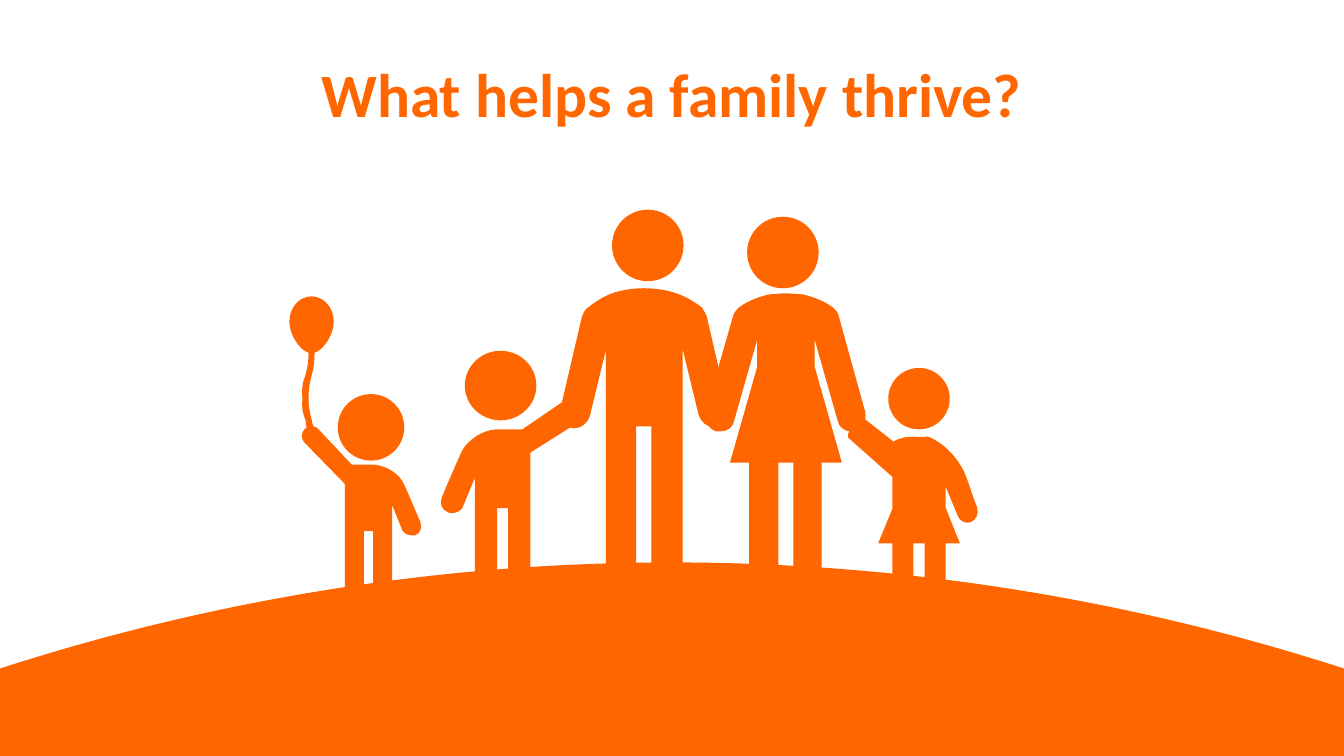
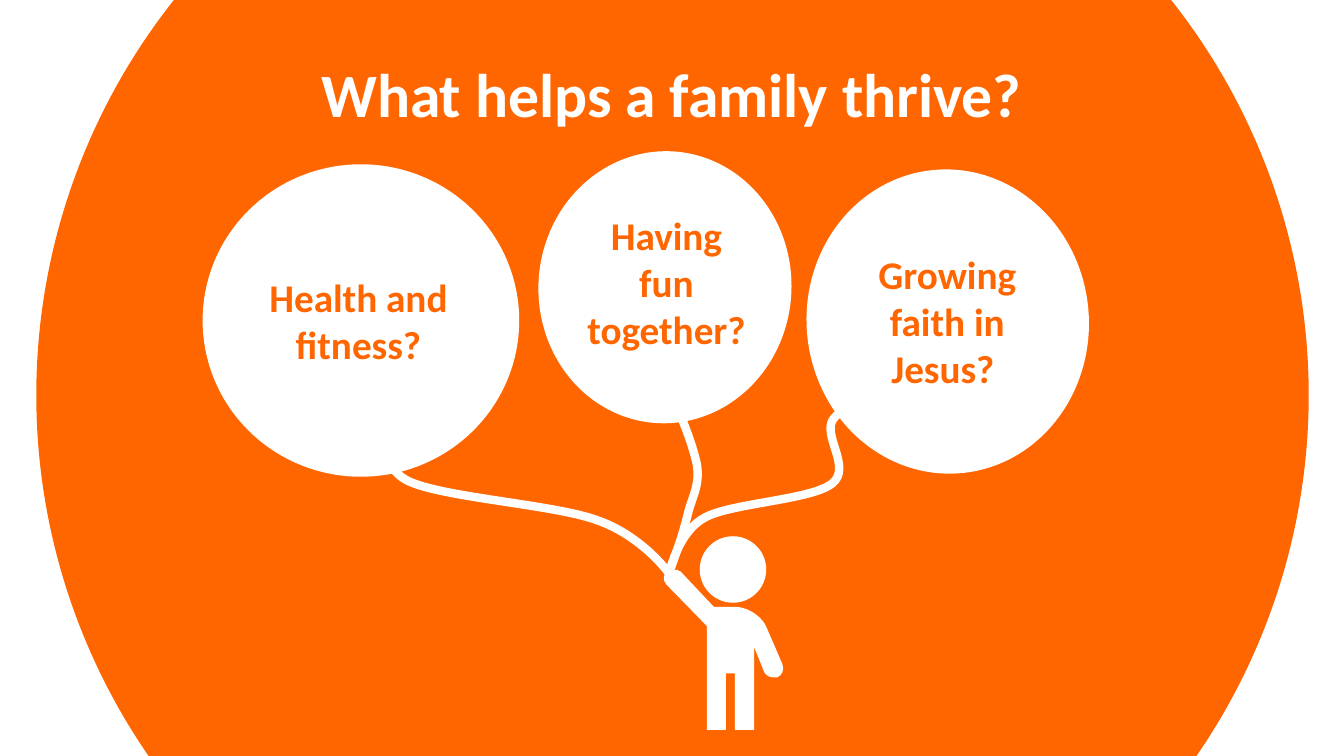
from dataclasses import dataclass

from lxml.etree import SubElement
from pptx import Presentation
from pptx.dml.color import RGBColor
from pptx.enum.shapes import MSO_SHAPE
from pptx.enum.text import MSO_ANCHOR, MSO_AUTO_SIZE, PP_ALIGN
from pptx.oxml.ns import qn
from pptx.util import Inches, Pt


@dataclass(frozen=True)
class Theme:
    """Colours, font and sizes shared by both slides."""

    orange: RGBColor = RGBColor(0xFF, 0x66, 0x00)
    white: RGBColor = RGBColor(0xFF, 0xFF, 0xFF)
    font: str = "Calibri"
    title_size: int = 44
    caption_size: int = 28
    string_width: int = 6


TITLE = "What helps a family thrive?"
CURVE_STEPS = 12
COMMANDS = {"M": "a:moveTo", "L": "a:lnTo", "C": "a:cubicBezTo"}
CHILD_HEAD = (3.35, 3.91, 0.66, 0.66)
CHILD_SHIFT = (3.59, 1.41)

CHILD_BODY = """
    L 3.49 4.61 L 3.71 4.61 C 3.86 4.62 3.98 4.73 4.01 4.81
    C 4.02 4.83 4.11 5.04 4.17 5.18 C 4.19 5.23 4.17 5.29 4.12 5.31
    C 4.11 5.31 4.09 5.31 4.08 5.31 C 4.04 5.31 4.01 5.29 3.99 5.26
    L 3.89 5.01 L 3.89 5.83 L 3.7 5.83 L 3.7 5.27 L 3.61 5.27 L 3.61 5.83
    L 3.42 5.83 L 3.42 4.8 L 3.02 4.39 C 2.98 4.35 2.99 4.29 3.02 4.26
    C 3.03 4.25 3.04 4.24 3.04 4.24
"""
CHILD = "M 3.04 4.24 C 3.06 4.24 3.09 4.23 3.1 4.24 C 3.12 4.24 3.14 4.25 3.16 4.26" + CHILD_BODY
BALLOON_CHILD = """
    M 2.87 3.19 C 2.87 3.05 2.97 2.94 3.09 2.94 C 3.21 2.94 3.31 3.05 3.31 3.19
    C 3.31 3.32 3.21 3.47 3.12 3.5 C 3.12 3.5 3.12 3.5 3.12 3.51
    C 3.12 3.58 3.11 3.66 3.09 3.73 C 3.07 3.8 3.06 3.87 3.06 3.95
    C 3.06 4.02 3.07 4.09 3.09 4.16 C 3.09 4.18 3.1 4.2 3.11 4.23
    C 3.13 4.23 3.14 4.24 3.16 4.26
""" + CHILD_BODY + """
    C 3.04 4.22 3.03 4.2 3.03 4.17 C 3 4.1 2.99 4.02 3 3.95
    C 2.99 3.87 3 3.79 3.03 3.72 C 3.05 3.65 3.06 3.58 3.06 3.51
    C 3.06 3.5 3.06 3.5 3.06 3.5 C 2.97 3.47 2.87 3.32 2.87 3.19
"""
SON = """
    M 5.72 4.2 C 5.78 4.11 5.69 3.97 5.59 3.98 L 5.18 4.26 L 4.92 4.26
    C 4.75 4.27 4.6 4.41 4.57 4.5 C 4.56 4.52 4.45 4.77 4.38 4.94
    C 4.36 4.99 4.38 5.06 4.44 5.08 C 4.45 5.09 4.47 5.09 4.48 5.09
    C 4.53 5.09 4.57 5.07 4.59 5.03 L 4.71 4.74 L 4.71 5.7 L 4.93 5.7
    L 4.93 5.04 L 5.04 5.04 L 5.04 5.7 L 5.26 5.7 L 5.26 4.49 L 5.72 4.2
"""
DAUGHTER = """
    M 8.85 4.73 L 8.41 4.34 C 8.4 4.27 8.5 4.16 8.53 4.12 L 8.86 4.38
    C 9.01 4.3 9.1 4.35 9.2 4.33 C 9.31 4.37 9.43 4.47 9.51 4.59
    C 9.59 4.7 9.62 4.86 9.69 5.03 C 9.71 5.09 9.69 5.15 9.63 5.18
    C 9.58 5.2 9.52 5.17 9.5 5.12 L 9.38 4.83 L 9.38 5.04 L 9.52 5.39
    L 9.38 5.39 L 9.38 5.8 L 9.17 5.8 L 9.17 5.39 L 9.06 5.39 L 9.06 5.8
    L 8.85 5.8 L 8.85 5.39 L 8.71 5.39 L 8.85 5.05 L 8.85 4.73
"""
MOTHER = """
    M 8.58 4.08 L 8.32 3.14 C 8.31 3.1 8.29 3.07 8.26 3.05
    C 8.18 2.99 8.08 2.95 7.96 2.92 C 7.9 2.92 7.85 2.91 7.79 2.91
    C 7.74 2.91 7.69 2.92 7.63 2.92 C 7.51 2.95 7.41 2.99 7.33 3.05
    C 7.3 3.08 7.28 3.1 7.27 3.14 L 7 4.08 C 6.98 4.17 7.02 4.25 7.1 4.28
    C 7.12 4.28 7.13 4.28 7.15 4.28 C 7.21 4.28 7.27 4.24 7.28 4.18
    L 7.51 3.37 L 7.51 3.64 L 7.24 4.59 L 7.43 4.59 L 7.43 5.66 L 7.72 5.66
    L 7.72 4.59 L 7.87 4.59 L 7.87 5.66 L 8.15 5.66 L 8.15 4.59 L 8.35 4.59
    L 8.08 3.64 L 8.08 3.37 L 8.31 4.18 C 8.33 4.25 8.39 4.28 8.44 4.28
    C 8.46 4.28 8.47 4.28 8.49 4.28 C 8.56 4.25 8.6 4.17 8.58 4.08
"""
FATHER = """
    M 7.22 4.05 L 7.01 3.14 C 7 3.11 6.98 3.08 6.96 3.05
    C 6.87 2.98 6.76 2.92 6.64 2.89 C 6.56 2.87 6.47 2.86 6.39 2.86
    C 6.3 2.86 6.22 2.87 6.14 2.89 C 6.01 2.92 5.91 2.99 5.82 3.06
    C 5.79 3.09 5.78 3.12 5.77 3.15 L 5.56 4.05 C 5.56 4.06 5.55 4.08 5.55 4.09
    C 5.55 4.18 5.62 4.25 5.7 4.25 C 5.77 4.25 5.83 4.19 5.85 4.13
    L 6.01 3.47 L 6.01 5.6 L 6.31 5.6 L 6.31 4.23 L 6.46 4.23 L 6.46 5.6
    L 6.77 5.6 L 6.77 3.46 L 6.93 4.12 C 6.95 4.18 7.01 4.24 7.08 4.24
    C 7.16 4.24 7.23 4.17 7.23 4.09 C 7.23 4.07 7.22 4.05 7.22 4.05
"""
FAMILY_BODIES = [BALLOON_CHILD, SON, DAUGHTER, MOTHER, FATHER]
FAMILY_HEADS = [
    CHILD_HEAD,
    (4.61, 3.48, 0.71, 0.69),
    (6.07, 2.08, 0.71, 0.71),
    (7.41, 2.15, 0.71, 0.71),
    (8.81, 3.65, 0.61, 0.61),
]
STRINGS = [
    ("""M 6.97 3.9 C 6.98 4.2 6.98 4.5 6.94 4.72 C 6.89 4.93 6.77 5 6.67 5.14
    C 6.56 5.29 6.44 5.43 6.31 5.57""", 337.6),
    ("""M 9.16 2.94 C 9.16 3.27 9.16 3.6 9.01 3.8 C 8.87 4 8.4 3.98 8.27 4.15
    C 8.14 4.31 8.46 4.64 8.25 4.8 C 8.04 4.96 7.27 4.99 7 5.13
    C 6.74 5.26 6.65 5.64 6.65 5.64 L 6.65 5.64""", 0),
    ("""M 4.23 4.07 C 3.97 4.32 3.72 4.57 4.01 4.75 C 4.29 4.93 5.49 5 5.92 5.16
    C 6.36 5.31 6.63 5.68 6.63 5.68 L 6.63 5.68""", 0),
]
BALLOONS = [
    ("Having fun together?", (5.34, 1.5, 2.51, 2.7), 3.7, (5.66, 2.05, 1.9, 1.51)),
    ("Health and fitness?", (2.01, 1.63, 3.14, 3.1), 0, (2.39, 2.66, 2.33, 1.04)),
    ("Growing faith in Jesus? ", (8, 1.68, 2.8, 3.02), 355.1, (8.54, 2.43, 1.71, 1.51)),
]


def read_outline(outline, shift):
    """Turn an outline into a list of commands with their points."""
    segments = []
    for word in outline.split():
        if word in COMMANDS:
            numbers = []
            segments.append((word, numbers))
        else:
            numbers.append(Inches(float(word) + shift[len(numbers) % 2]))
    return [(command, list(zip(numbers[::2], numbers[1::2]))) for command, numbers in segments]


def sample(segments):
    """List points along the outline, which give its extent."""
    points = []
    for command, knots in segments:
        if command != "C":
            points += knots
            continue
        corners = [points[-1], *knots]
        for step in range(1, CURVE_STEPS + 1):
            t = step / CURVE_STEPS
            weights = ((1 - t) ** 3, 3 * t * (1 - t) ** 2, 3 * t * t * (1 - t), t**3)
            points.append(tuple(sum(w * c[axis] for w, c in zip(weights, corners)) for axis in (0, 1)))
    return points


class Deck:
    """Holds the style and the slide being drawn."""

    def __init__(self, theme):
        self.theme = theme
        self.show = Presentation()
        self.show.slide_width = Inches(13.33)
        self.show.slide_height = Inches(7.5)
        self.slide = None

    def new_slide(self):
        self.slide = self.show.slides.add_slide(self.show.slide_layouts[6])

    def freeform(self, outline, close, shift=(0, 0)):
        segments = read_outline(outline, shift)
        start, *others = sample(segments)
        builder = self.slide.shapes.build_freeform(*start)
        builder.add_line_segments(others, close=close)
        drawn = builder.convert_to_shape()
        drawn.shadow.inherit = False
        contour = drawn.element.find(".//" + qn("a:path"))
        for segment in list(contour):
            contour.remove(segment)
        for command, knots in segments:
            segment = SubElement(contour, qn(COMMANDS[command]))
            for x, y in knots:
                SubElement(segment, qn("a:pt"), x=str(x - drawn.left), y=str(y - drawn.top))
        if close:
            SubElement(contour, qn("a:close"))
        return drawn

    def paint(self, drawn, colour):
        drawn.fill.solid()
        drawn.fill.fore_color.rgb = colour
        drawn.line.fill.background()

    def body(self, outline, colour, shift=(0, 0)):
        self.paint(self.freeform(outline, True, shift), colour)

    def string(self, curve, colour, rotation):
        drawn = self.freeform(curve, False)
        drawn.rotation = rotation
        drawn.fill.background()
        drawn.line.color.rgb = colour
        drawn.line.width = Pt(self.theme.string_width)

    def circle(self, box, colour, rotation=0, shift=(0, 0)):
        left, top, width, height = box
        place = (left + shift[0], top + shift[1], width, height)
        drawn = self.slide.shapes.add_shape(MSO_SHAPE.OVAL, *map(Inches, place))
        drawn.shadow.inherit = False
        drawn.rotation = rotation
        self.paint(drawn, colour)

    def text(self, words, box, size, colour):
        frame = self.slide.shapes.add_textbox(*map(Inches, box)).text_frame
        frame.word_wrap = True
        frame.text = words
        paragraph = frame.paragraphs[0]
        paragraph.alignment = PP_ALIGN.CENTER
        font = paragraph.runs[0].font
        font.name = self.theme.font
        font.size = Pt(size)
        font.bold = True
        font.color.rgb = colour
        return frame

    def title(self, colour):
        frame = self.text(TITLE, (0, 0.01, 13.33, 1.92), self.theme.title_size, colour)
        frame.vertical_anchor = MSO_ANCHOR.MIDDLE
        frame.paragraphs[0].line_spacing = 0.9

    def caption(self, words, box):
        frame = self.text(words, box, self.theme.caption_size, self.theme.orange)
        frame.auto_size = MSO_AUTO_SIZE.SHAPE_TO_FIT_TEXT


def main():
    theme = Theme()
    deck = Deck(theme)

    deck.new_slide()
    for outline in FAMILY_BODIES:
        deck.body(outline, theme.orange)
    for head in FAMILY_HEADS:
        deck.circle(head, theme.orange)
    deck.title(theme.orange)
    deck.circle((-14.96, 5.58, 43.25, 43.25), theme.orange)

    deck.new_slide()
    deck.circle((0.36, -2.39, 12.62, 12.62), theme.orange)
    deck.body(CHILD, theme.white, CHILD_SHIFT)
    deck.circle(CHILD_HEAD, theme.white, shift=CHILD_SHIFT)
    deck.title(theme.white)
    for curve, rotation in STRINGS:
        deck.string(curve, theme.white, rotation)
    for words, balloon, rotation, caption in BALLOONS:
        deck.circle(balloon, theme.white, rotation)
        deck.caption(words, caption)

    deck.show.save("out.pptx")


if __name__ == "__main__":
    main()
